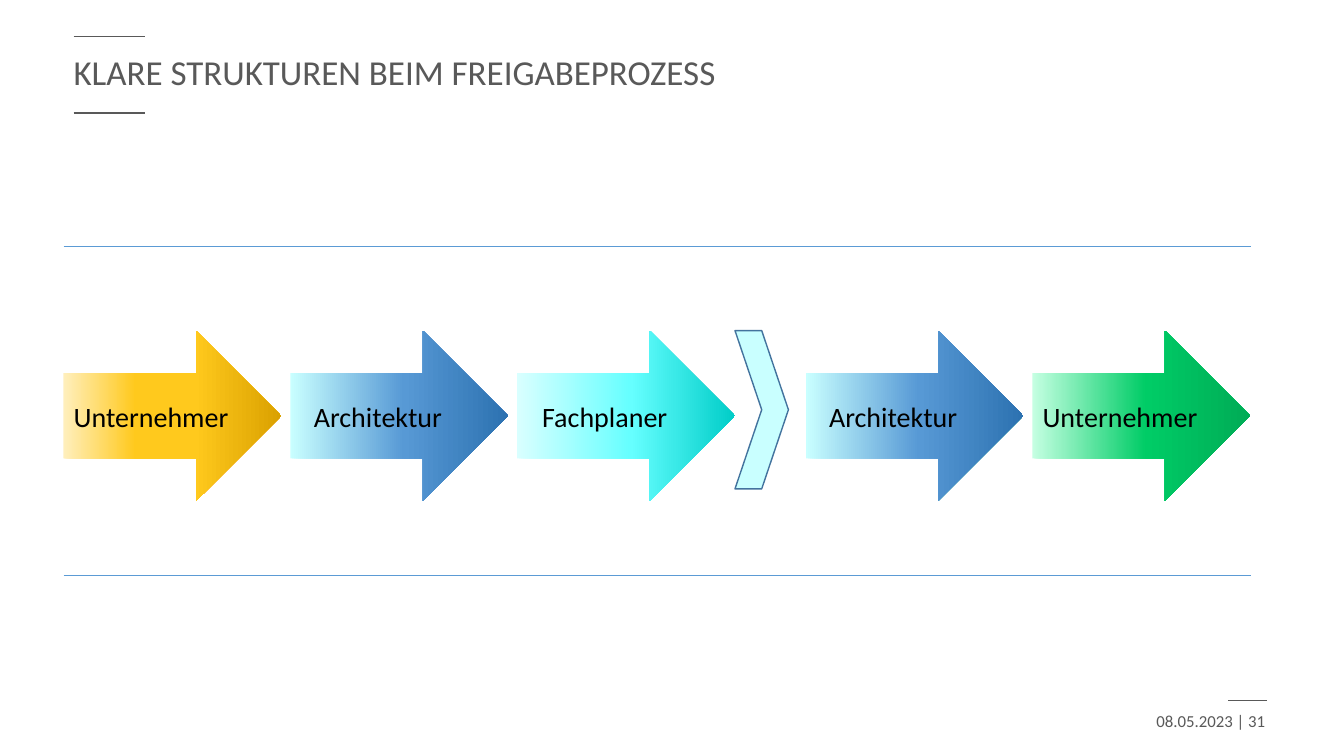
from collections import namedtuple
from lxml.etree import SubElement
from pptx import Presentation
from pptx.dml.color import RGBColor
from pptx.enum.shapes import MSO_CONNECTOR as Connector, MSO_SHAPE as Shape
from pptx.enum.text import MSO_ANCHOR as Anchor, MSO_AUTO_SIZE as AutoSize, PP_ALIGN as Align
from pptx.oxml.ns import qn
from pptx.util import Pt

PX = 9144  # EMU per px, 100 px to the inch
Box = namedtuple("Box", "left top width height")


class Theme:
    font = "Calibri"
    grey, black = "595959", "000000"
    rule, chevron_fill, chevron_line = "5B9BD5", "C9FFFF", "43739E"
    title_size, step_size, footer_size = 25, 20, 12
    # Gradient stops from left to right: percent, colour
    yellow = ((0, "FFEFBD"), (33, "FFC91D"), (60, "FFC91D"), (100, "DAA100"))
    blue = ((0, "C9FFFF"), (52, "5799D5"), (100, "2D72B1"))
    cyan = ((0, "D9FFFF"), (52, "66FFFF"), (100, "00CDC8"))
    green = ((0, "C5FFE2"), (52, "00CC66"), (100, "00AC56"))


STEPS_BEFORE = (("Unternehmer", Theme.yellow), ("Architektur", Theme.blue),
                ("Fachplaner", Theme.cyan))
STEPS_AFTER = (("Architektur", Theme.blue), ("Unternehmer", Theme.green))
ARROW_WIDTH, ARROW_HEIGHT, ARROW_PITCH = 216, 169, 225
CHEVRON_WIDTH, CHEVRON_HEIGHT = 53, 157


def emu(box):
    return [length * PX for length in box]


def add_rule(page, left, top, width, colour, weight):
    line = page.shapes.add_connector(
        Connector.STRAIGHT, left * PX, top * PX, (left + width) * PX, top * PX)
    line.line.color.rgb = RGBColor.from_string(colour)
    line.line.width = Pt(weight)
    SubElement(line._element.spPr, qn("a:effectLst"))


def write(frame, text, size, colour, align):
    frame.word_wrap = True
    frame.auto_size = AutoSize.NONE
    frame.vertical_anchor = Anchor.MIDDLE
    para = frame.paragraphs[0]
    para.alignment = align
    span = para.add_run()
    span.text = text
    span.font.name = Theme.font
    span.font.size = Pt(size)
    span.font.color.rgb = RGBColor.from_string(colour)
    return para


def fill_gradient(shape, stops):
    shape.fill.gradient()
    shape.fill.gradient_angle = 0
    stop_list = shape._element.spPr.find(qn("a:gradFill")).find(qn("a:gsLst"))
    for old_stop in list(stop_list):
        stop_list.remove(old_stop)
    for percent, colour in stops:
        stop = SubElement(stop_list, qn("a:gs"), pos=str(percent * 1000))
        SubElement(stop, qn("a:srgbClr"), val=colour)


def add_title(page, box, text):
    title = page.shapes.title
    title.left, title.top, title.width, title.height = emu(box)
    para = write(title.text_frame, text, Theme.title_size, Theme.grey, Align.LEFT)
    para.line_spacing = 0.9
    for top in (box.top, box.top + box.height):
        add_rule(page, box.left + 10, top, 71, Theme.grey, 1)


def add_arrow(page, box, label, stops):
    arrow = page.shapes.add_shape(Shape.RIGHT_ARROW, *emu(box))
    arrow.shadow.inherit = False
    arrow.line.fill.background()
    fill_gradient(arrow, stops)
    write(arrow.text_frame, label, Theme.step_size, Theme.black, Align.CENTER)


def add_chevron(page, box):
    chevron = page.shapes.add_shape(Shape.CHEVRON, *emu(box))
    chevron.shadow.inherit = False
    chevron.fill.solid()
    chevron.fill.fore_color.rgb = RGBColor.from_string(Theme.chevron_fill)
    chevron.line.color.rgb = RGBColor.from_string(Theme.chevron_line)
    chevron.line.width = Pt(1)


def add_process(page, box):
    """Arrows between two rules, with a chevron dividing the two phases."""
    for top in (box.top, box.top + box.height):
        add_rule(page, box.left, top, box.width, Theme.rule, 0.5)
    arrow_top = box.top + 84
    for offset, steps in ((0, STEPS_BEFORE), (736, STEPS_AFTER)):
        for index, (label, stops) in enumerate(steps):
            left = box.left + offset + index * ARROW_PITCH
            add_arrow(page, Box(left, arrow_top, ARROW_WIDTH, ARROW_HEIGHT), label, stops)
    chevron_left = box.left + 2 * ARROW_PITCH + ARROW_WIDTH
    add_chevron(page, Box(chevron_left, arrow_top, CHEVRON_WIDTH, CHEVRON_HEIGHT))


def add_footer(page, box, text):
    add_rule(page, box.left + box.width - 47, box.top, 39, Theme.grey, 1)
    footer = page.shapes.add_textbox(*emu(box))
    write(footer.text_frame, text, Theme.footer_size, Theme.grey, Align.RIGHT)


def main():
    deck = Presentation()
    deck.slide_width, deck.slide_height = 1333 * PX, 750 * PX
    page = deck.slides.add_slide(deck.slide_layouts.get_by_name("Title Only"))
    add_title(page, Box(63, 36, 1001, 76), "KLARE STRUKTUREN BEIM FREIGABEPROZESS")
    add_process(page, Box(63, 244, 1178, 327))
    add_footer(page, Box(965, 695, 300, 40), "08.05.2023 | 31")
    deck.save("out.pptx")


if __name__ == "__main__":
    main()
